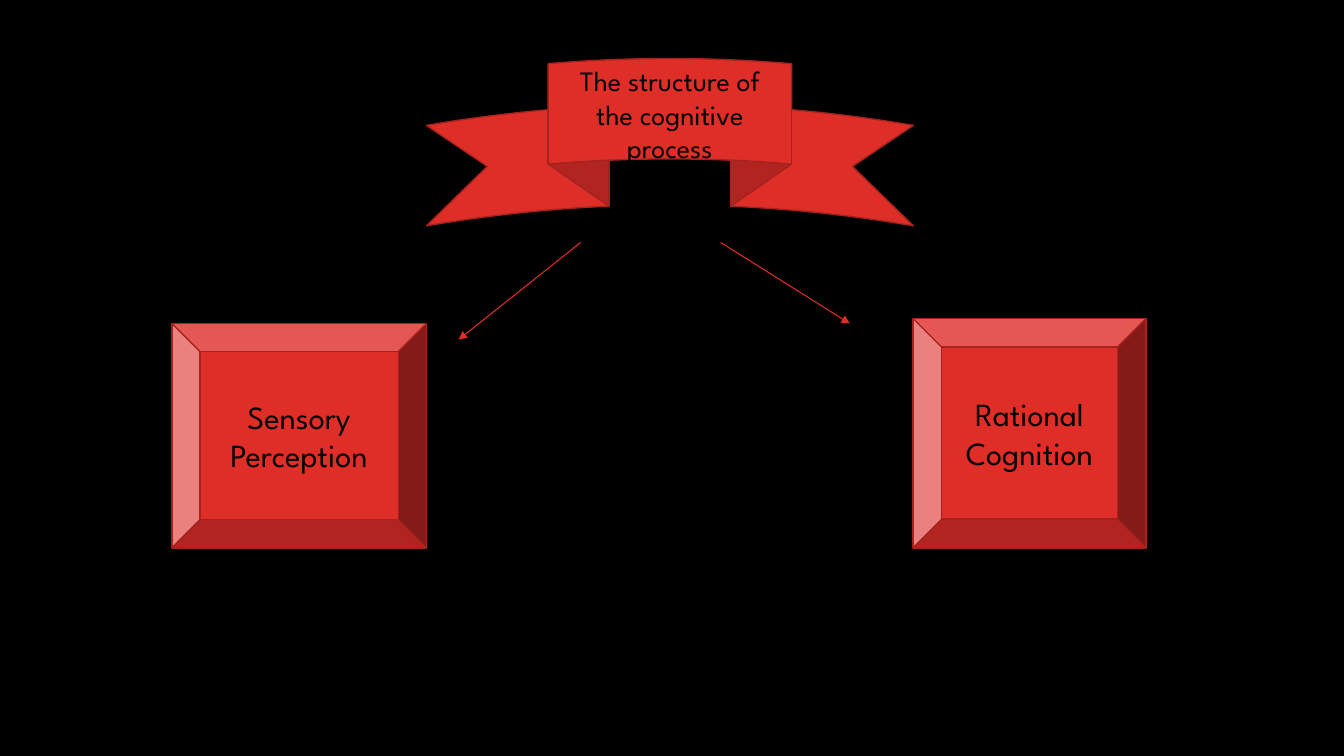
from dataclasses import dataclass

from lxml import etree
from pptx import Presentation
from pptx.dml.color import RGBColor
from pptx.enum import shapes, text
from pptx.oxml import ns
from pptx.util import Pt

BLACK = RGBColor(0x00, 0x00, 0x00)
RED = RGBColor(0xDF, 0x2E, 0x28)
DARK = RGBColor(0xA5, 0x22, 0x1E)
FONT = "League Spartan"


@dataclass(frozen=True)
class Box:
    left: float
    top: float
    width: float
    height: float
    label: str


@dataclass(frozen=True)
class Arrow:
    x1: float
    y1: float
    x2: float
    y2: float


TITLE = Box(391.5, 41.8, 173.9, 79, "The structure of the cognitive process")
RIBBON = Box(304.6, 41.8, 347.8, 119.5, "")
BOXES = [
    Box(122.8, 231.1, 181.8, 160.2, "Sensory Perception"),
    Box(652.2, 227.5, 166.5, 163.8, "Rational Cognition"),
]
ARROWS = [
    Arrow(514.8, 173.2, 607, 231.1),
    Arrow(414.7, 173.2, 327.6, 242.6),
]


def write(shape, words: str, size: float = 23, color: RGBColor = BLACK) -> None:
    frame = shape.text_frame
    frame.word_wrap = True
    frame.auto_size = text.MSO_AUTO_SIZE.NONE
    frame.vertical_anchor = text.MSO_ANCHOR.MIDDLE
    frame.text = words
    para = frame.paragraphs[0]
    para.alignment = text.PP_ALIGN.CENTER
    para.font.name = FONT
    para.font.size = Pt(size)
    para.font.color.rgb = color


def draw_box(slide, box: Box, kind: shapes.MSO_SHAPE):
    shape = slide.shapes.add_shape(
        kind, Pt(box.left), Pt(box.top), Pt(box.width), Pt(box.height))
    shape.shadow.inherit = False
    shape.fill.solid()
    shape.fill.fore_color.rgb = RED
    shape.line.color.rgb = DARK
    shape.line.width = Pt(1)
    if box.label:
        write(shape, box.label)
    return shape


def draw_arrow(slide, arrow: Arrow) -> None:
    line = slide.shapes.add_connector(
        shapes.MSO_CONNECTOR.STRAIGHT,
        Pt(arrow.x1), Pt(arrow.y1), Pt(arrow.x2), Pt(arrow.y2))
    line.line.color.rgb = RED
    line.line.width = Pt(0.75)
    etree.SubElement(line.line._get_or_add_ln(), ns.qn("a:tailEnd"), type="triangle")
    etree.SubElement(line._element.spPr, ns.qn("a:effectLst"))


def draw_title(slide, box: Box) -> None:
    title = slide.shapes.title
    title.left, title.top = Pt(box.left), Pt(box.top)
    title.width, title.height = Pt(box.width), Pt(box.height)
    write(title, box.label, size=20)
    # Bring the words in front of the ribbon
    slide.shapes._spTree.append(title._element)


def main() -> None:
    deck = Presentation()
    deck.slide_width, deck.slide_height = Pt(960), Pt(540)
    slide = deck.slides.add_slide(deck.slide_layouts[5])
    slide.background.fill.solid()
    slide.background.fill.fore_color.rgb = BLACK

    # Two branches and their arrows
    for box in BOXES:
        draw_box(slide, box, shapes.MSO_SHAPE.BEVEL)
    for arrow in ARROWS:
        draw_arrow(slide, arrow)

    # Ribbon with the title
    ribbon = draw_box(slide, RIBBON, shapes.MSO_SHAPE.CURVED_UP_RIBBON)
    ribbon.adjustments[0] = 0.4
    draw_title(slide, TITLE)

    deck.save("out.pptx")


if __name__ == "__main__":
    main()
